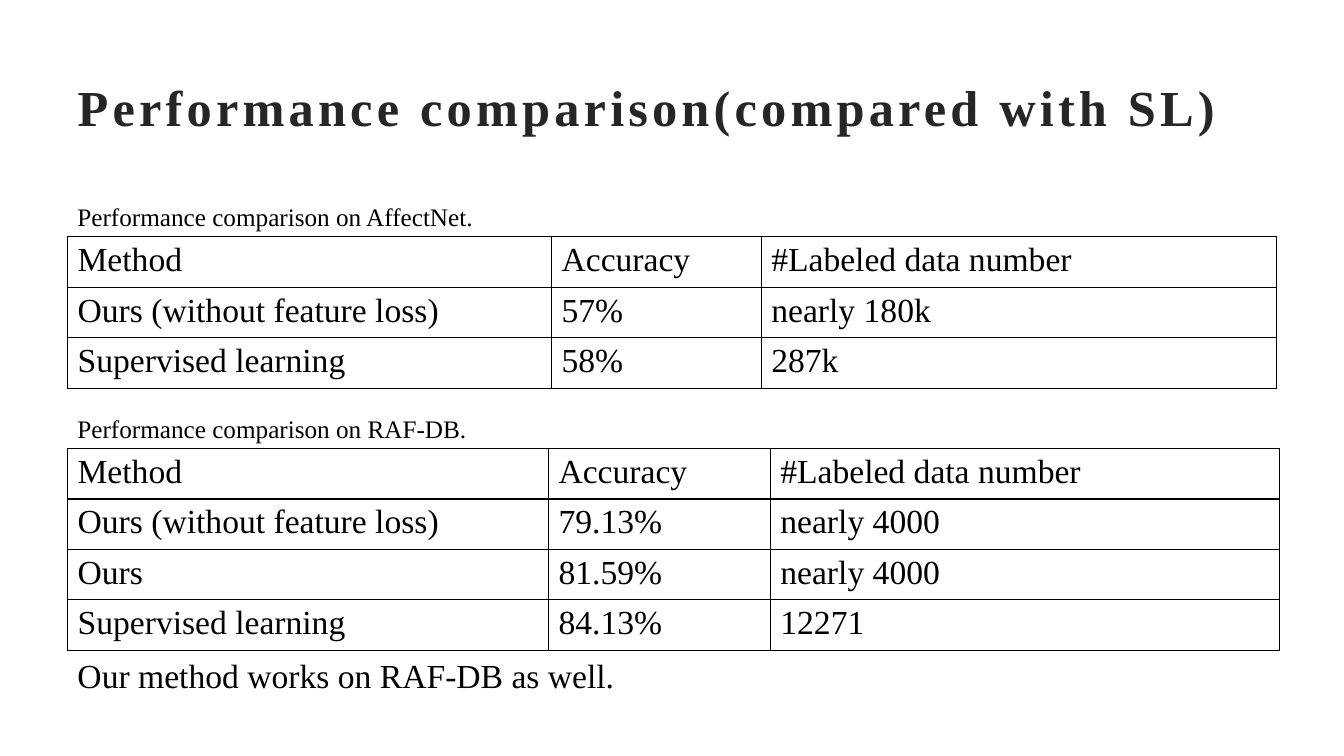
from dataclasses import dataclass

from lxml.etree import SubElement
from pptx import Presentation
from pptx.dml.color import RGBColor
from pptx.enum.text import MSO_ANCHOR, MSO_AUTO_SIZE, PP_ALIGN
from pptx.oxml.ns import qn
from pptx.util import Inches, Pt

TITLE = "Performance comparison(compared with SL)"
HEADER = ("Method", "Accuracy", "#Labeled data number")
COMPARISONS = [
    {
        "caption": "Performance comparison on AffectNet.",
        "top": 1.95,
        "columns": (4.8, 2.08, 5.11),
        "rows": [
            ("Ours (without feature loss)", "57%", "nearly 180k"),
            ("Supervised learning", "58%", "287k"),
        ],
    },
    {
        "caption": "Performance comparison on RAF-DB.",
        "top": 4.05,
        "columns": (4.77, 2.2, 5.05),
        "rows": [
            ("Ours (without feature loss)", "79.13%", "nearly 4000"),
            ("Ours", "81.59%", "nearly 4000"),
            ("Supervised learning", "84.13%", "12271"),
        ],
    },
]
CONCLUSION = "Our method works on RAF-DB as well."

SLIDE_WIDTH, SLIDE_HEIGHT = 13.33, 7.5
MARGIN = 0.67
CONTENT_WIDTH = SLIDE_WIDTH - 2 * MARGIN
CAPTION_HEIGHT = 0.4
ROW_HEIGHT = 0.5


@dataclass(frozen=True)
class Theme:
    font: str = "Times New Roman"
    title_color: str = "262626"
    text_color: str = "000000"
    border_color: str = "000000"
    title_size: int = 36
    body_size: int = 24
    caption_size: int = 18
    title_spacing: int = 3
    border_width: int = 1


THEME = Theme()


def write_text(frame, text, size=THEME.body_size, color=THEME.text_color,
               bold=False, spacing=0):
    paragraph = frame.paragraphs[0]
    paragraph.alignment = PP_ALIGN.LEFT
    run = paragraph.add_run()
    run.text = text
    run.font.name = THEME.font
    run.font.size = Pt(size)
    run.font.bold = bold
    run.font.color.rgb = RGBColor.from_string(color)
    if spacing:
        run.font._element.set("spc", str(spacing * 100))


def add_title(slide):
    title = slide.shapes.title
    title.left, title.top = Inches(MARGIN), Inches(MARGIN)
    title.width, title.height = Inches(CONTENT_WIDTH), Inches(0.77)
    frame = title.text_frame
    frame.word_wrap = True
    frame.auto_size = MSO_AUTO_SIZE.NONE
    frame.vertical_anchor = MSO_ANCHOR.MIDDLE
    write_text(frame, TITLE, size=THEME.title_size, color=THEME.title_color,
               bold=True, spacing=THEME.title_spacing)


def add_text_box(slide, text, top, width, height, **text_format):
    box = slide.shapes.add_textbox(
        Inches(MARGIN), Inches(top), Inches(width), Inches(height))
    box.text_frame.word_wrap = True
    box.text_frame.auto_size = MSO_AUTO_SIZE.SHAPE_TO_FIT_TEXT
    write_text(box.text_frame, text, **text_format)


def add_borders(cell):
    properties = cell._tc.get_or_add_tcPr()
    for side in ("a:lnL", "a:lnR", "a:lnT", "a:lnB"):
        line = SubElement(properties, qn(side), w=str(Pt(THEME.border_width)))
        fill = SubElement(line, qn("a:solidFill"))
        SubElement(fill, qn("a:srgbClr"), val=THEME.border_color)


def add_comparison(slide, comparison):
    """Add a captioned table and return the position of its bottom edge."""
    add_text_box(slide, comparison["caption"], comparison["top"], 4.44,
                 CAPTION_HEIGHT, size=THEME.caption_size)
    columns = comparison["columns"]
    rows = [HEADER, *comparison["rows"]]
    top = comparison["top"] + CAPTION_HEIGHT
    height = ROW_HEIGHT * len(rows)
    table = slide.shapes.add_table(
        len(rows), len(columns), Inches(MARGIN), Inches(top),
        Inches(sum(columns)), Inches(height)).table
    table.first_row = False
    table.horz_banding = False
    for column, width in zip(table.columns, columns):
        column.width = Inches(width)
    for row_index, row in enumerate(rows):
        for column_index, text in enumerate(row):
            cell = table.cell(row_index, column_index)
            write_text(cell.text_frame, text)
            add_borders(cell)
            cell.fill.background()
    return top + height


def main():
    presentation = Presentation()
    presentation.slide_width = Inches(SLIDE_WIDTH)
    presentation.slide_height = Inches(SLIDE_HEIGHT)
    slide = presentation.slides.add_slide(presentation.slide_layouts[5])
    add_title(slide)
    for comparison in COMPARISONS:
        bottom = add_comparison(slide, comparison)
    add_text_box(slide, CONCLUSION, bottom, 6.79, ROW_HEIGHT)
    presentation.save("out.pptx")


if __name__ == "__main__":
    main()
